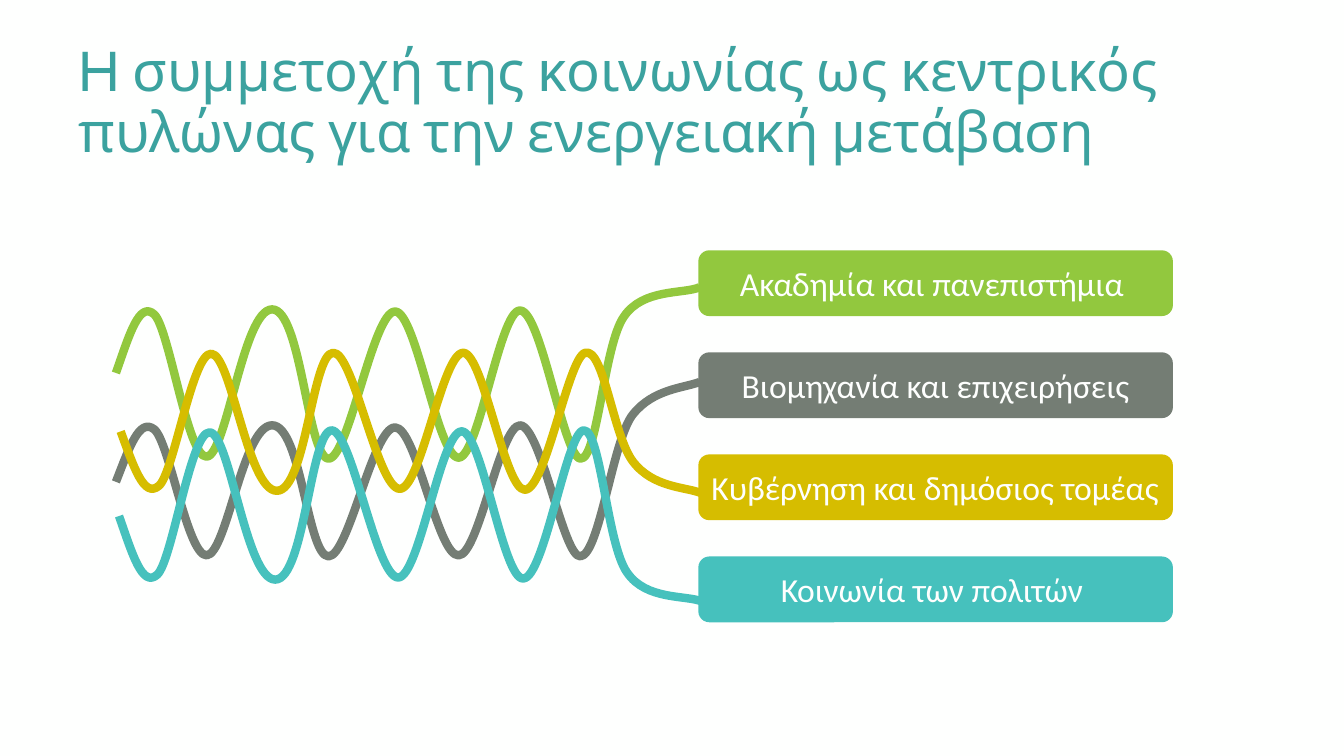
from lxml import etree
from pptx import Presentation
from pptx.dml.color import RGBColor
from pptx.enum.shapes import MSO_SHAPE
from pptx.enum.text import MSO_ANCHOR, PP_ALIGN
from pptx.oxml.ns import qn
from pptx.util import Pt

ROUND = MSO_SHAPE.ROUNDED_RECTANGLE
MIDDLE = MSO_ANCHOR.MIDDLE
LEFT, CENTER = PP_ALIGN.LEFT, PP_ALIGN.CENTER

WHITE, TITLE = "FEFFFE", "3BA29F"
GREEN, GREY, GOLD, TEAL = "92C83E", "747D74", "D6BD00", "46C1BD"

BOXES = [
    ("Ακαδημία και πανεπιστήμια ", GREEN, CENTER),
    ("Βιομηχανία και επιχειρήσεις", GREY, CENTER),
    ("Κυβέρνηση και δημόσιος τομέας", GOLD, LEFT),
    ("Κοινωνία των πολιτών ", TEAL, CENTER),
]

WAVE_X = [82.8, 92.2, 99.4, 110.2, 121, 133.9, 147.6, 162, 173.5, 194.4,
          215.3, 219.6, 234.7, 249.1, 266.4, 282.2, 297.4, 312.5, 327.6,
          342, 357.1, 371.5, 386.6, 402.5, 414.7]
GREEN_X = WAVE_X + [427, 431.3, 445.7, 459.4, 488.2, 499.7]
GREY_X = WAVE_X + [428.4, 437.8, 452.2, 466.6, 488.2, 499.7]
GOLD_X = WAVE_X + [428, 434.4, 448.8, 463.2, 486.2, 497]

GREEN_Y = [266.4, 239.8, 214.6, 224.6, 234.7, 326.9, 326.2, 325.4, 221, 221,
           221, 326.9, 327.6, 327.6, 222.5, 222.5, 222.5, 326.9, 326.9,
           326.9, 221, 221.8, 221.8, 326.9, 327.6,
           328.3, 246.2, 226.1, 205.9, 210.2, 205.2]
GREY_Y = [344.2, 320.4, 298.1, 306.7, 315.4, 396.7, 396.7, 396, 303.8, 303.8,
          303.8, 397.4, 397.4, 397.4, 305.3, 305.3, 305.3, 397.4, 396.7,
          396.7, 303.8, 303.8, 304.6, 398.9, 397.4,
          396, 313.2, 295.9, 277.9, 277.2, 272.9]
GOLD_Y = [308.2, 333.4, 356.4, 347, 337.7, 252, 252.7, 253.4, 350.6, 350.6,
          350.6, 252, 252, 251.3, 349.2, 349.2, 349.2, 252, 252,
          252.7, 349.9, 349.9, 349.9, 254.9, 252,
          248.4, 311, 329.8, 348.5, 347.8, 352.1]
MIRROR = 635
TEAL_Y = [MIRROR - y for y in GREEN_Y]

WAVES = [
    (GREEN_X, GREEN_Y, 0, GREEN),
    (GREY_X, GREY_Y, 0, GREY),
    (GREEN_X, TEAL_Y, 2.2, TEAL),
    (GOLD_X, GOLD_Y, 3.4, GOLD),
]


def paint(fill, color):
    """Give a fill one solid colour."""
    fill.solid()
    fill.fore_color.rgb = RGBColor.from_string(color)


def write(shape, text, *, size, font, color, align=LEFT, space=None):
    """Set the text of a shape and its format."""
    frame = shape.text_frame
    frame.word_wrap = True
    frame.vertical_anchor = MIDDLE
    para = frame.paragraphs[0]
    para.alignment = align
    para.line_spacing = space
    run = para.add_run()
    run.text = text
    run.font.size = Pt(size)
    run.font.name = font
    run.font.color.rgb = RGBColor.from_string(color)


def add_title(slide, text):
    """Place the title."""
    box = slide.shapes.add_textbox(Pt(49), Pt(37.5), Pt(864), Pt(73.5))
    write(box, text, size=40, font="Cabin", color=TITLE, space=0.9)


def add_box(slide, top, text, color, align):
    """Draw one labelled box."""
    box = slide.shapes.add_shape(ROUND, Pt(498.8), Pt(top), Pt(339), Pt(47))
    box.shadow.inherit = False
    paint(box.fill, color)
    box.line.fill.background()
    write(box, text, size=24, font="Calibri", color=WHITE, align=align)


def bend(shape):
    """Turn each three line segments of a freeform into one cubic curve."""
    lines = list(shape.element.iter(qn("a:lnTo")))
    for i in range(0, len(lines), 3):
        curve = etree.Element(qn("a:cubicBezTo"))
        lines[i].addprevious(curve)
        for line in lines[i:i + 3]:
            curve.append(line[0])
            line.getparent().remove(line)


def add_wave(slide, xs, ys, shift, color):
    """Draw one wavy strand."""
    pts = [(Pt(x + shift), Pt(y)) for x, y in zip(xs, ys)]
    pen = slide.shapes.build_freeform(*pts[0])
    pen.add_line_segments(pts[1:], close=False)
    wave = pen.convert_to_shape()
    bend(wave)
    wave.shadow.inherit = False
    wave.fill.background()
    wave.line.width = Pt(6)
    paint(wave.line.fill, color)


def main():
    """Build and save the slide."""
    deck = Presentation()
    deck.slide_width, deck.slide_height = Pt(960), Pt(540)
    slide = deck.slides.add_slide(deck.slide_layouts[6])
    paint(slide.background.fill, WHITE)
    add_title(slide, "H συμμετοχή της κοινωνίας ως κεντρικός πυλώνας "
                     "για την ενεργειακή μετάβαση")
    for i, box in enumerate(BOXES):
        add_box(slide, 178.8 + 72.9 * i, *box)
    for wave in WAVES:
        add_wave(slide, *wave)
    deck.save("out.pptx")


if __name__ == "__main__":
    main()
